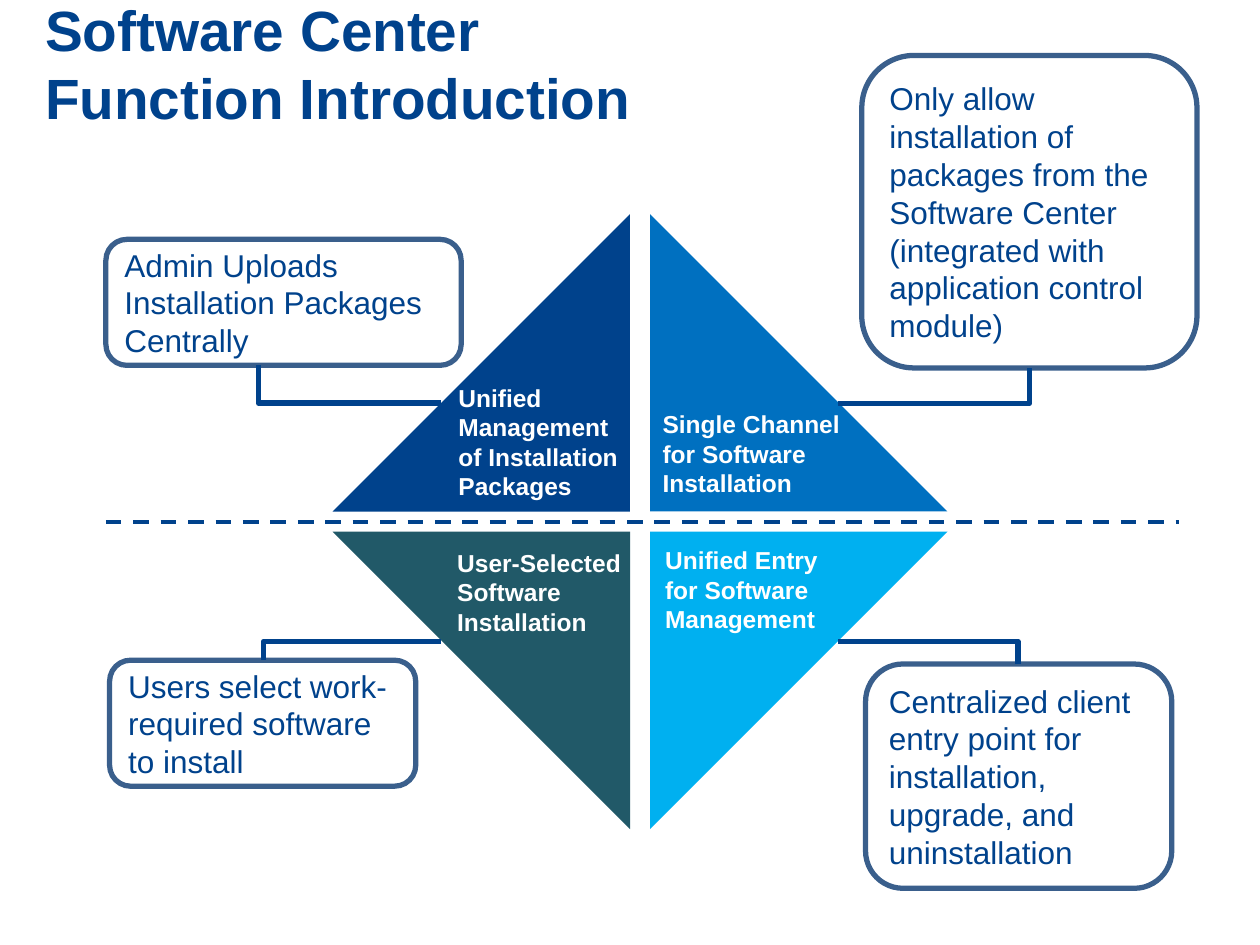
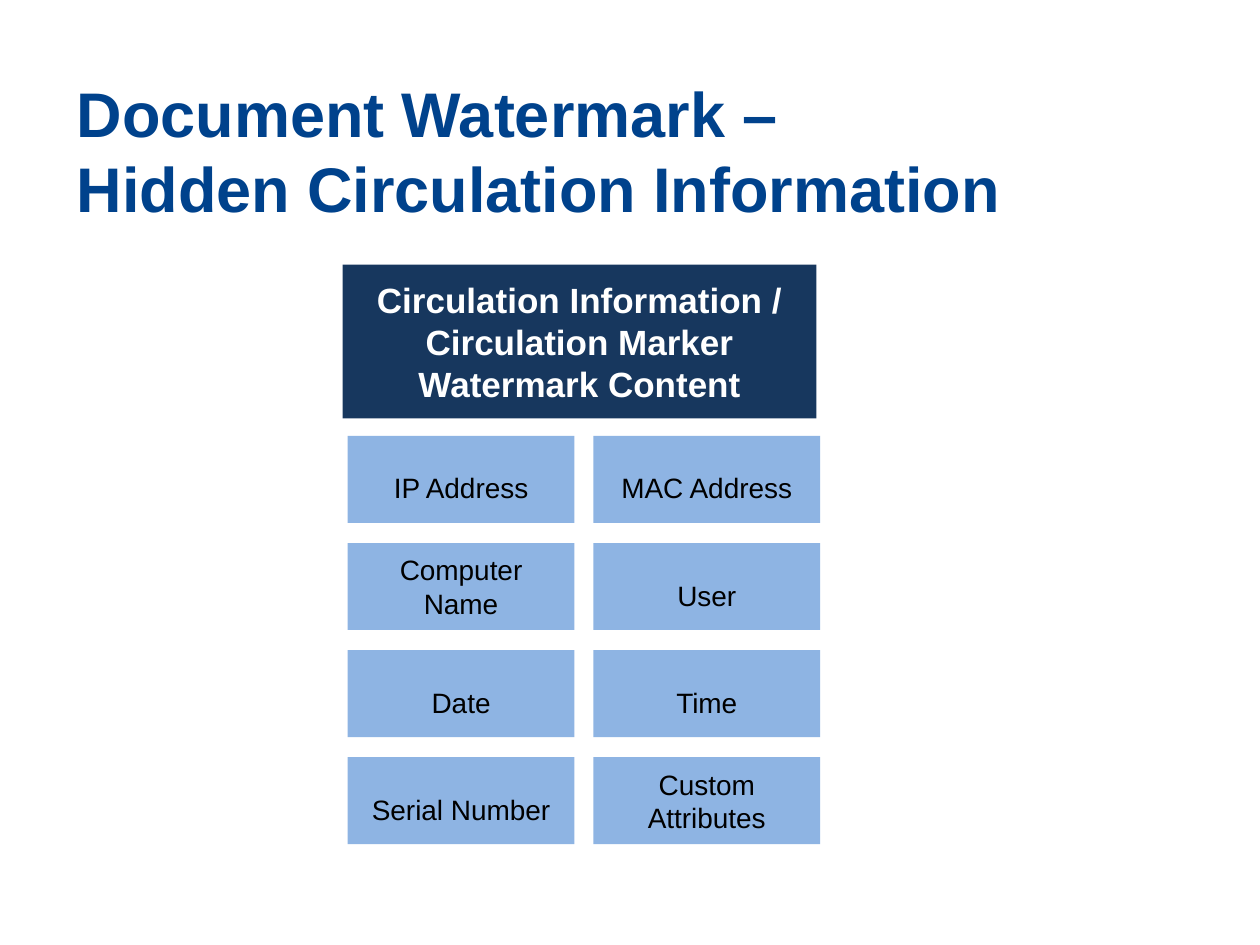
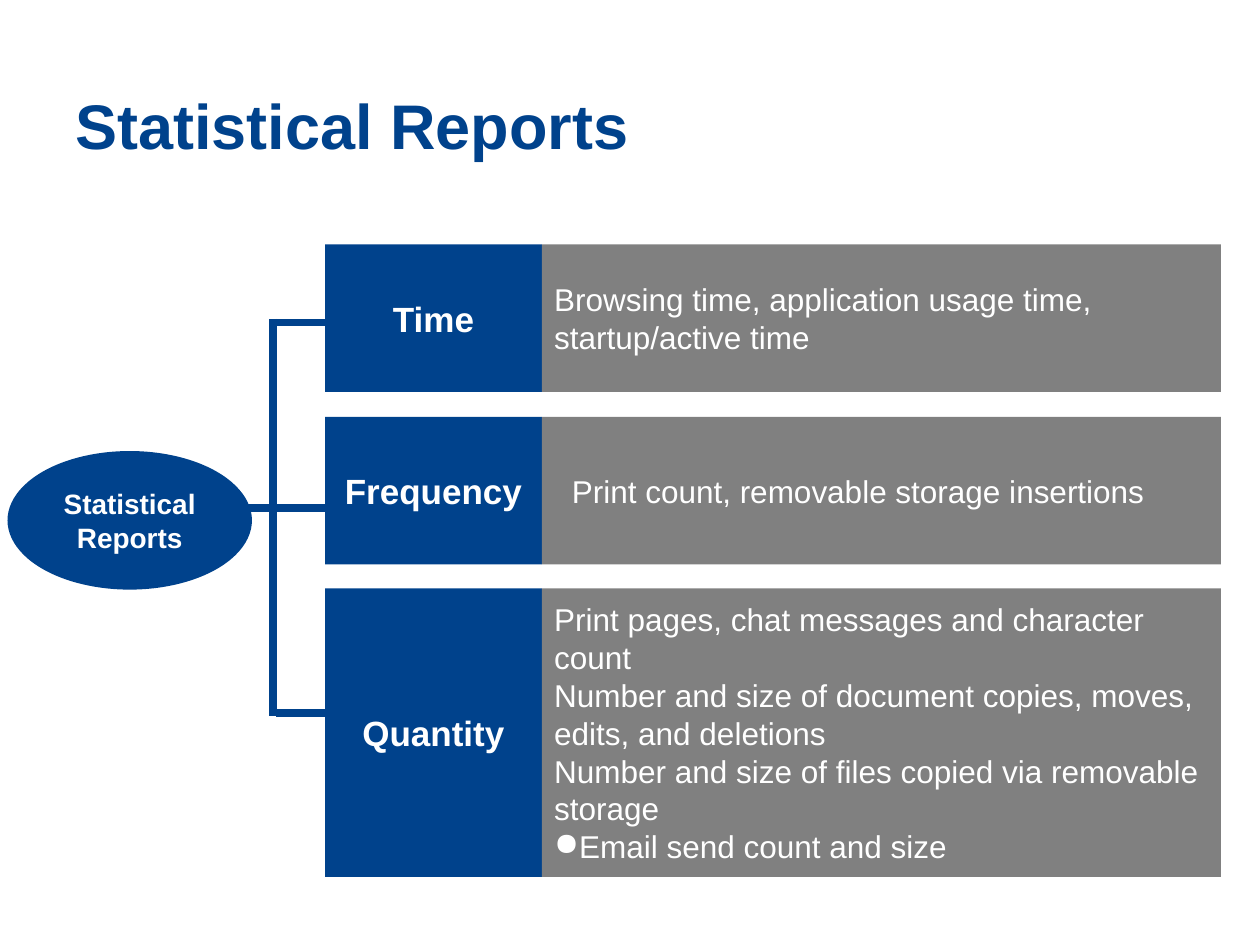
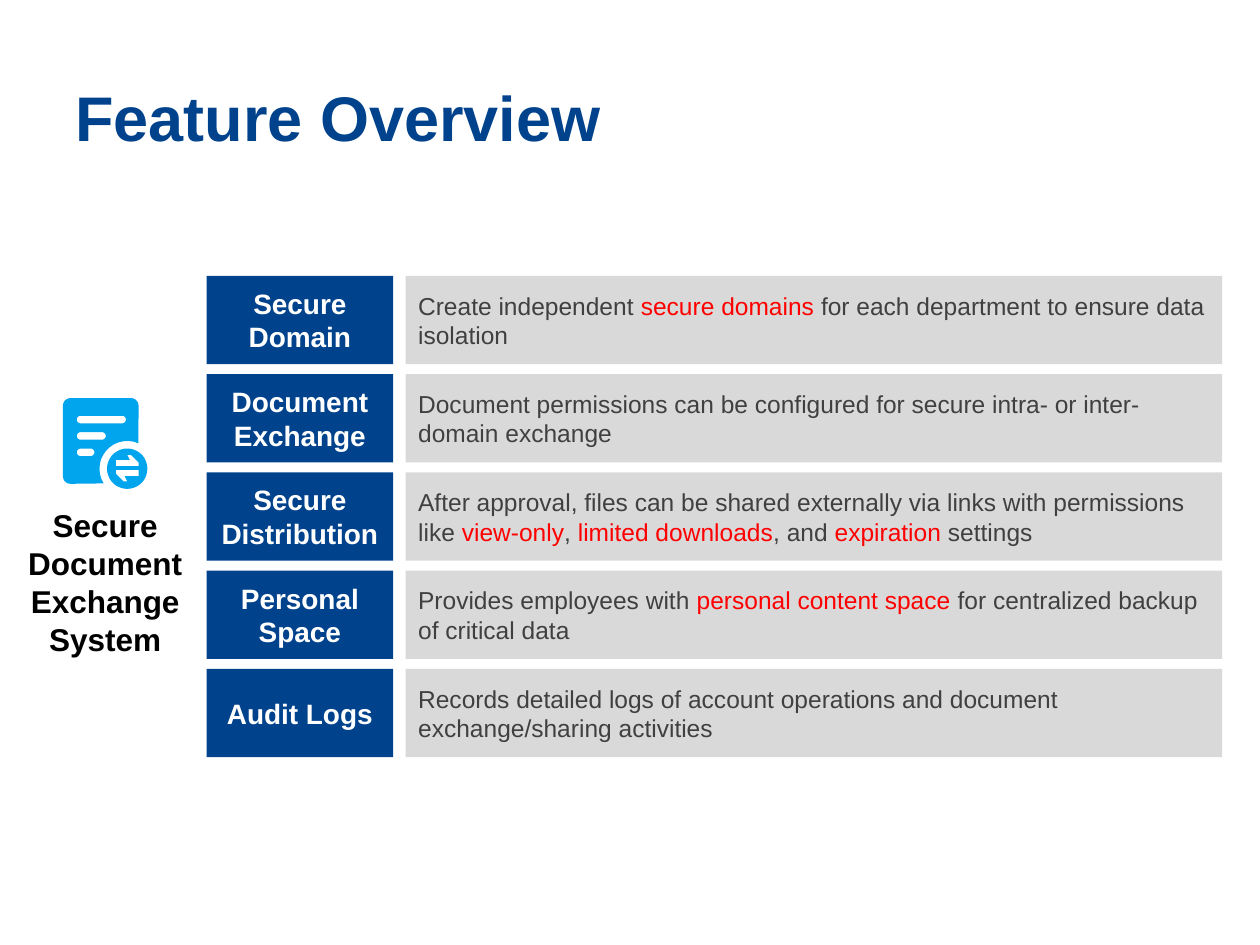
import dataclasses
import math
import typing

import pptx
import pptx.dml.color
import pptx.enum.dml
import pptx.enum.shapes
import pptx.enum.text
import pptx.oxml.ns
import pptx.oxml.xmlchemy
import pptx.util
from lxml import etree

Inches = pptx.util.Inches
Shape = pptx.enum.shapes.MSO_SHAPE
Anchor = pptx.enum.text.MSO_ANCHOR
Align = pptx.enum.text.PP_ALIGN
qn = pptx.oxml.ns.qn

FONT = "Arial"
NAVY = "00428C"
WHITE = "FFFFFF"
BLACK = "000000"
RED = "FF0000"
OUTLINE = "3A5F8C"
HEADER_BLUE = "17375E"
CELL_BLUE = "8EB4E3"
GREY = "808080"
PALE_GREY = "D9D9D9"
DARK_GREY = "404040"
ICON_BLUE = "00A5EE"

Point = tuple[float, float]


@dataclasses.dataclass(frozen=True)
class Area:
    left: float
    top: float
    width: float
    height: float

    def lengths(self) -> list[int]:
        return [Inches(value) for value in dataclasses.astuple(self)]


@dataclasses.dataclass(frozen=True)
class Quadrant:
    left: float
    top: float
    rotation: int
    color: str
    label_area: Area
    label: str


@dataclasses.dataclass(frozen=True)
class Callout:
    area: Area
    text: str
    link_start: Point
    link_end: Point


@dataclasses.dataclass(frozen=True)
class Report:
    top: float
    height: float
    name: str
    details: str
    indent: float = 0
    bulleted: tuple[int, ...] = ()


# Shared drawing functions

def rgb(color: str) -> pptx.dml.color.RGBColor:
    return pptx.dml.color.RGBColor.from_string(color)


def write(shape, text: str, *, size: float, color: str, bold: bool = False,
          align=Align.LEFT, anchor=Anchor.MIDDLE, spacing: float = 1,
          wrap: bool = True, indent: float = 0, bulleted: tuple[int, ...] = ()) -> None:
    """Write one paragraph per line; words between asterisks turn red."""
    frame = shape.text_frame
    frame.word_wrap = wrap
    frame.vertical_anchor = anchor
    for number, line in enumerate(text.split("\n")):
        para = frame.paragraphs[0] if number == 0 else frame.add_paragraph()
        if indent:
            para._p.get_or_add_pPr().set("marL", str(Inches(indent)))
        if number in bulleted:
            etree.SubElement(para._p.get_or_add_pPr(), qn("a:buChar")).set("char", "●")
        para.alignment = align
        para.line_spacing = spacing
        for position, part in enumerate(line.split("*")):
            if not part:
                continue
            span = para.add_run()
            span.text = part
            span.font.name = FONT
            span.font.size = pptx.util.Pt(size)
            span.font.bold = bold
            span.font.color.rgb = rgb(RED if position % 2 else color)


def add_text(page, area: Area, text: str, *, anchor=Anchor.TOP, **text_format) -> None:
    write(page.shapes.add_textbox(*area.lengths()), text, anchor=anchor, **text_format)


def add_title(page, area: Area, text: str, *, size: float = 36, **text_format) -> None:
    add_text(page, area, text, size=size, color=NAVY, bold=True,
             **{"anchor": Anchor.MIDDLE, **text_format})


def add_box(page, kind, area: Area, fill: typing.Optional[str] = None,
            outline: typing.Optional[str] = None):
    box = page.shapes.add_shape(kind, *area.lengths())
    box.shadow.inherit = False
    if fill:
        box.fill.solid()
        box.fill.fore_color.rgb = rgb(fill)
    else:
        box.fill.background()
    if outline:
        box.line.color.rgb = rgb(outline)
        box.line.width = pptx.util.Pt(3)
    else:
        box.line.fill.background()
    return box


def add_line(page, start: Point, end: Point, width: float, *,
             bent: bool = False, dashed: bool = False) -> None:
    """Draw a line; a bent one runs sideways first, then up or down."""
    kinds = pptx.enum.shapes.MSO_CONNECTOR
    line = page.shapes.add_connector(kinds.ELBOW if bent else kinds.STRAIGHT,
                                     *[Inches(value) for value in start + end])
    line.line.color.rgb = rgb(NAVY)
    line.line.width = pptx.util.Pt(width)
    if dashed:
        line.line.dash_style = pptx.enum.dml.MSO_LINE.DASH
    properties = line._element.spPr
    if bent:
        properties.find(qn("a:prstGeom")).set("prst", "bentConnector2")
    etree.SubElement(properties, qn("a:effectLst"))


# Icon outlines

def arc(center: Point, radius: float, start: int, end: int) -> list[Point]:
    steps = max(6, abs(end - start) // 10)
    angles = [math.radians(start + (end - start) * step / steps) for step in range(steps + 1)]
    return [(center[0] + radius * math.cos(angle), center[1] + radius * math.sin(angle))
            for angle in angles]


def pill(left: float, right: float, middle: float) -> list[Point]:
    radius = 0.03
    return (arc((left + radius, middle), radius, 90, 270)
            + arc((right - radius, middle), radius, 270, 450))


def add_exchange_icon(page) -> None:
    badge = (1.01, 3.72)
    sheet = (arc((0.56, 3.22), 0.06, 180, 270) + arc((1.04, 3.22), 0.06, 270, 360)
             + arc(badge, 0.22, -66, -212) + arc((0.56, 3.78), 0.06, 90, 180))
    right_arrow = [(0.92, 3.65), (1.03, 3.65), (1.01, 3.61), (1.04, 3.61),
                   (1.1, 3.67), (1.1, 3.7), (0.92, 3.7)]
    left_arrow = [(2.02 - x, 7.43 - y) for x, y in right_arrow]
    text_lines = [pill(0.61, right, middle)
                  for right, middle in [(1, 3.33), (0.84, 3.46), (0.75, 3.59)]]
    outlines = [[(x * 1000, y * 1000) for x, y in outline] for outline in
                [sheet, arc(badge, 0.16, 0, 360), right_arrow, left_arrow, *text_lines]]
    builder = page.shapes.build_freeform(*outlines[0][0], scale=Inches(1) / 1000)
    for number, outline in enumerate(outlines):
        if number:
            builder.move_to(*outline[0])
        builder.add_line_segments(outline[1:], close=True)
    icon = builder.convert_to_shape()
    icon.shadow.inherit = False
    icon.fill.solid()
    icon.fill.fore_color.rgb = rgb(ICON_BLUE)
    icon.line.fill.background()


# Slide content

QUADRANTS = [
    Quadrant(5.16, 1.7, 0, "0070C0", Area(5.16, 3.2, 1.68, 1.04),
             "Single Channel for Software Installation"),
    Quadrant(5.16, 4.22, 90, "00B0F0", Area(5.18, 4.28, 1.69, 1.04),
             "Unified Entry for Software Management"),
    Quadrant(2.64, 1.7, 270, NAVY, Area(3.54, 2.99, 1.66, 1.28),
             "Unified Management\nof Installation Packages"),
    Quadrant(2.64, 4.22, 180, "215968", Area(3.53, 4.3, 1.62, 1.04),
             "User-Selected Software Installation"),
]

CALLOUTS = [
    Callout(Area(0.84, 1.9, 2.82, 1), "Admin Uploads Installation Packages Centrally",
            (3.5, 3.2), (2.05, 2.9)),
    Callout(Area(6.84, 0.44, 2.66, 2.48),
            "Only allow installation of packages from the Software Center "
            "(integrated with application control module)", (6.65, 3.2), (8.17, 2.92)),
    Callout(Area(0.87, 5.24, 2.43, 1), "Users select work-required software to install",
            (3.5, 5.09), (2.09, 5.24)),
    Callout(Area(6.87, 5.27, 2.43, 1.78),
            "Centralized client entry point for installation, upgrade, and uninstallation",
            (6.65, 5.09), (8.08, 5.27)),
]

WATERMARK_FIELDS = ["IP Address", "MAC Address", "Computer Name", "User",
                    "Date", "Time", "Serial Number", "Custom Attributes"]
TWO_LINE_FIELDS = {"Computer Name", "Custom Attributes"}

REPORTS = [
    Report(1.94, 1.17, "Time", "Browsing time, application usage time, startup/active time"),
    Report(3.31, 1.17, "Frequency", "Print count, removable storage insertions", indent=0.14),
    Report(4.67, 2.29, "Quantity",
           "Print pages, chat messages and character count\n"
           "Number and size of document copies, moves, edits, and deletions\n"
           "Number and size of files copied via removable storage\n"
           "Email send count and size", bulleted=(3,)),
]

FEATURES = [
    ("Secure Domain",
     "Create independent *secure domains* for each department to ensure data isolation"),
    ("Document Exchange",
     "Document permissions can be configured for secure intra- or inter-domain exchange"),
    ("Secure Distribution",
     "After approval, files can be shared externally via links with permissions like "
     "*view-only*, *limited downloads*, and *expiration* settings"),
    ("Personal Space",
     "Provides employees with *personal content space* for centralized backup of critical data"),
    ("Audit Logs",
     "Records detailed logs of account operations and document exchange/sharing activities"),
]


# Slides

def build_software_center(page) -> None:
    add_line(page, (0.84, 4.14), (9.36, 4.14), 2.25, dashed=True)
    for quadrant in QUADRANTS:
        triangle = add_box(page, Shape.RIGHT_TRIANGLE,
                           Area(quadrant.left, quadrant.top, 2.36, 2.36), quadrant.color)
        triangle.rotation = quadrant.rotation
    for quadrant in QUADRANTS:
        add_text(page, quadrant.label_area, quadrant.label, size=14, color=WHITE, bold=True)
    for callout in CALLOUTS:
        box = add_box(page, Shape.ROUNDED_RECTANGLE, callout.area, outline=OUTLINE)
        write(box, callout.text, size=18, color=NAVY)
        add_line(page, callout.link_start, callout.link_end, 3, bent=True)
    add_title(page, Area(0.26, 0.07, 5.21, 0.85),
              "Software Center Function Introduction", size=32.4)


def build_watermark(page) -> None:
    add_title(page, Area(0.51, 0.54, 7.61, 1.31),
              "Document Watermark –\nHidden Circulation Information",
              anchor=Anchor.TOP, wrap=False)
    header = add_box(page, Shape.RECTANGLE, Area(2.72, 2.1, 3.76, 1.22), HEADER_BLUE)
    write(header, "Circulation Information / Circulation Marker Watermark Content",
          size=20, color=WHITE, bold=True, align=Align.CENTER)
    for number, field in enumerate(WATERMARK_FIELDS):
        row, column = divmod(number, 2)
        area = Area(2.76 + 1.95 * column, 3.46 + 0.85 * row, 1.8, 0.69)
        write(add_box(page, Shape.RECTANGLE, area, CELL_BLUE), field, size=16, color=BLACK,
              align=Align.CENTER, spacing=1 if field in TWO_LINE_FIELDS else 1.5)


def build_reports(page) -> None:
    add_title(page, Area(0.5, 0.36, 9, 1.25), "Statistical Reports")
    root = add_box(page, Shape.OVAL, Area(0.06, 3.58, 1.94, 1.1), NAVY)
    write(root, "Statistical Reports", size=16, color=WHITE, bold=True, align=Align.CENTER)
    for report in REPORTS:
        name = add_box(page, Shape.RECTANGLE, Area(2.58, report.top, 1.72, report.height), NAVY)
        write(name, report.name, size=20, color=WHITE, bold=True, align=Align.CENTER)
        details = add_box(page, Shape.RECTANGLE,
                          Area(4.3, report.top, 5.39, report.height), GREY)
        write(details, report.details, size=18, color=WHITE,
              indent=report.indent, bulleted=report.bulleted)
    # Bracket from the oval to the three reports
    add_line(page, (2.17, 2.53), (2.17, 5.68), 4.5)
    for left, level in [(2.19, 2.56), (2.19, 5.66), (1.8, 4.03)]:
        add_line(page, (left, level), (2.58, level), 4.5)


def build_features(page) -> None:
    add_title(page, Area(0.5, 0.3, 9, 1.25), "Feature Overview")
    add_text(page, Area(-0.19, 3.97, 2.05, 1.62), "Secure Document Exchange System",
             size=18, color=BLACK, bold=True, align=Align.CENTER)
    for row, (name, description) in enumerate(FEATURES):
        top = 2.19 + 0.78 * row
        label = add_box(page, Shape.RECTANGLE, Area(1.64, top, 1.48, 0.7), NAVY)
        write(label, name, size=16, color=WHITE, bold=True, align=Align.CENTER)
        band = add_box(page, Shape.RECTANGLE, Area(3.22, top, 6.48, 0.7), PALE_GREY)
        write(band, description, size=14, color=DARK_GREY)
    add_exchange_icon(page)


def main() -> None:
    deck = pptx.Presentation()
    deck.slide_width = Inches(10)
    deck.slide_height = Inches(7.5)
    for build in (build_software_center, build_watermark, build_reports, build_features):
        build(deck.slides.add_slide(deck.slide_layouts[6]))
    deck.save("out.pptx")


if __name__ == "__main__":
    main()
